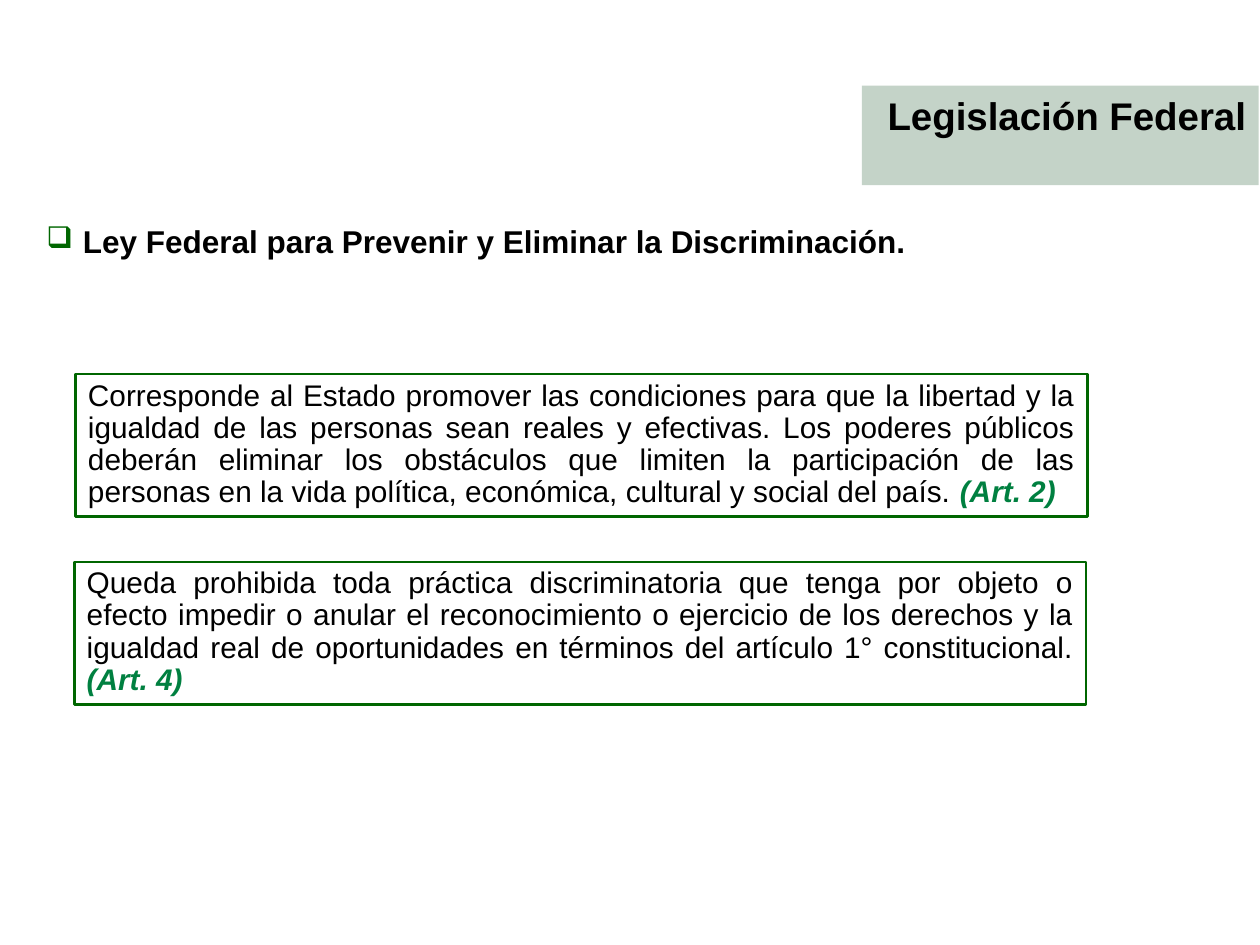
from lxml.etree import SubElement
from pptx import Presentation
from pptx.dml.color import RGBColor
from pptx.enum.shapes import MSO_SHAPE
from pptx.enum.text import MSO_ANCHOR, PP_ALIGN
from pptx.oxml.ns import qn
from pptx.util import Inches, Pt

TITLE = "Legislación Federal"
LAW = "Ley Federal para Prevenir y Eliminar la Discriminación."
ARTICLES = [
    (0.6, 2.97,
     "Corresponde al Estado promover las condiciones para que la libertad y la igualdad de las "
     "personas sean reales y efectivas. Los poderes públicos deberán eliminar los obstáculos que "
     "limiten la participación de las personas en la vida política, económica, cultural y social "
     "del país. ", "(Art. 2)"),
    (0.59, 4.46,
     "Queda prohibida toda práctica discriminatoria que tenga por objeto o efecto impedir o anular "
     "el reconocimiento o ejercicio de los derechos y la igualdad real de oportunidades en términos "
     "del artículo 1° constitucional. ", "(Art. 4)"),
]
BLACK, DARK_GREEN, GREEN, BANNER = "000000", "006600", "008040", "1E582C"


def color(value):
    return RGBColor.from_string(value)


def add_box(page, left, top, width, height, align):
    box = page.shapes.add_shape(MSO_SHAPE.RECTANGLE, Inches(left), Inches(top),
                                Inches(width), Inches(height))
    box.shadow.inherit = False
    box.fill.background()
    box.line.fill.background()
    box.text_frame.word_wrap = True
    box.text_frame.vertical_anchor = MSO_ANCHOR.TOP
    para = box.text_frame.paragraphs[0]
    para.alignment = align
    return box, para


def add_span(para, text, size, ink=BLACK, bold=False, italic=False):
    span = para.add_run()
    span.text = text
    span.font.name = "Arial"
    span.font.size = Pt(size)
    span.font.bold = bold
    span.font.italic = italic
    span.font.color.rgb = color(ink)


def add_bullet(para):
    properties = para._p.get_or_add_pPr()
    properties.set("marL", str(Inches(0.29)))
    properties.set("indent", str(-Inches(0.29)))
    bullet_color = SubElement(properties, qn("a:buClr"))
    SubElement(bullet_color, qn("a:srgbClr"), val=DARK_GREEN)
    SubElement(properties, qn("a:buSzPct"), val="95000")
    SubElement(properties, qn("a:buChar"), char="❑")


def main():
    deck = Presentation()
    deck.slide_width, deck.slide_height = Inches(10), Inches(7.5)
    page = deck.slides.add_slide(deck.slide_layouts[6])

    banner, para = add_box(page, 6.84, 0.68, 3.15, 0.79, PP_ALIGN.RIGHT)
    banner.fill.solid()
    banner.fill.fore_color.rgb = color(BANNER)
    tint = banner._element.spPr.find(qn("a:solidFill")).find(qn("a:srgbClr"))
    SubElement(tint, qn("a:alpha"), val="26000")
    add_span(para, TITLE, 22, bold=True)

    heading, para = add_box(page, 0.27, 1.75, 8.6, 0.41, PP_ALIGN.LEFT)
    add_bullet(para)
    para.line_spacing = 0.9
    add_span(para, LAW, 18, bold=True)

    for left, top, text, source in ARTICLES:
        box, para = add_box(page, left, top, 8.03, 1.13, PP_ALIGN.JUSTIFY)
        box.line.color.rgb = color(DARK_GREEN)
        box.line.width = Pt(1.5)
        para.line_spacing = 0.9
        add_span(para, text, 17)
        add_span(para, source, 17, GREEN, bold=True, italic=True)

    deck.save("out.pptx")


if __name__ == "__main__":
    main()
